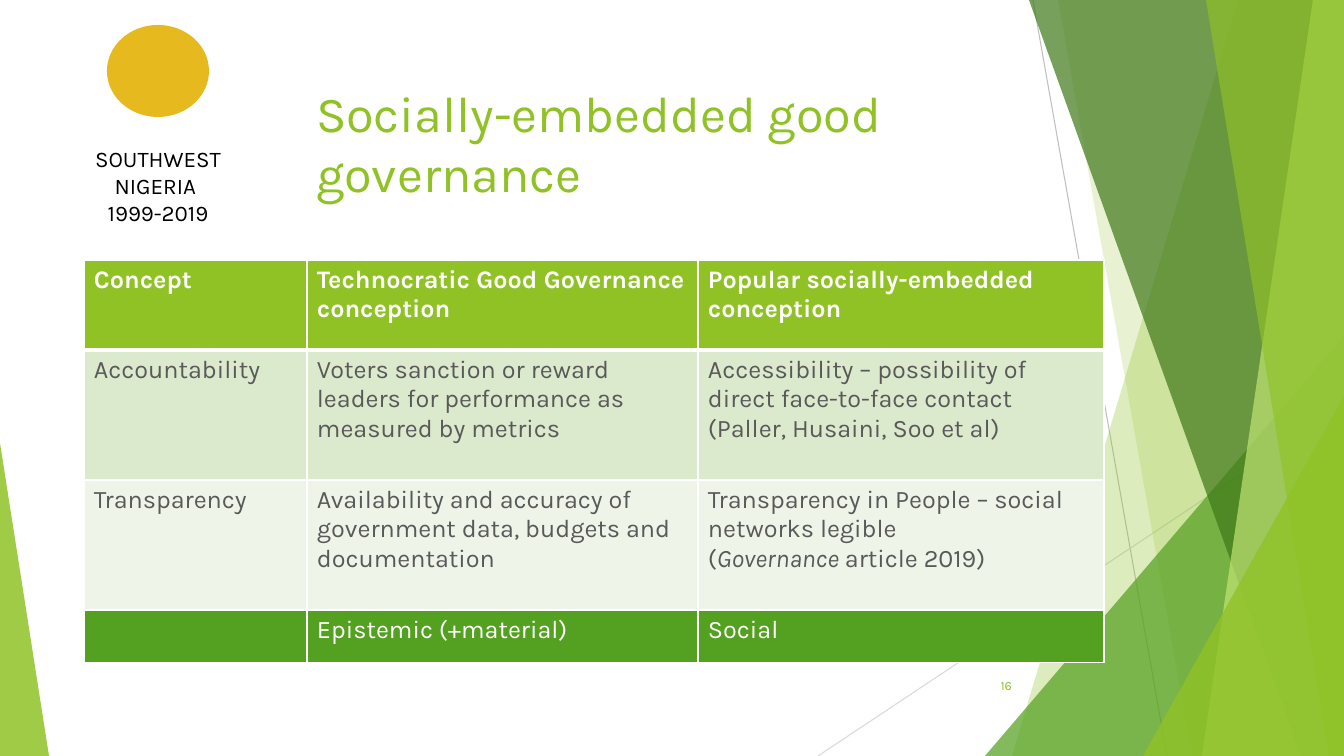
from lxml import etree
from pptx import Presentation
from pptx.dml.color import RGBColor
from pptx.enum.shapes import MSO_CONNECTOR, MSO_SHAPE
from pptx.enum.text import MSO_ANCHOR, PP_ALIGN
from pptx.oxml.ns import qn
from pptx.util import Emu, Pt

STRAIGHT = MSO_CONNECTOR.STRAIGHT
TRIANGLE, OVAL = MSO_SHAPE.ISOSCELES_TRIANGLE, MSO_SHAPE.OVAL
TOP, MIDDLE = MSO_ANCHOR.TOP, MSO_ANCHOR.MIDDLE
LEFT, CENTER, RIGHT = PP_ALIGN.LEFT, PP_ALIGN.CENTER, PP_ALIGN.RIGHT

EMU_PER_PX = 914400 / 100.8
WIDTH, HEIGHT = 1344, 756
INSET_X, INSET_Y = 10, 5
FONT = "Karla"
COLORS = {
    "white": "FFFFFF", "black": "000000", "body": "595959",
    "lime": "90C226", "green": "54A021", "forest": "3F7819", "pale": "C0E474",
    "band_dark": "DBE9CD", "band_light": "EEF4E8", "sun": "E6B91E",
    "line_dark": "BFBFBF", "line_light": "D9D9D9",
}

ROWS = [
    ("Concept", "Technocratic Good Governance conception",
     "Popular socially-embedded conception"),
    ("Accountability",
     "Voters sanction or reward leaders for performance as measured by metrics",
     "Accessibility – possibility of direct face-to-face contact "
     "(Paller, Husaini, Soo et al)"),
    ("Transparency",
     "Availability and accuracy of government data, budgets and documentation",
     "Transparency in People – social networks legible\n"
     "(*Governance* article 2019)"),
    ("", "Epistemic (+material)", "Social"),
]
ROW_STYLES = [("lime", "white", True), ("band_dark", "body", False),
              ("band_light", "body", False), ("green", "white", False)]


def px(length):
    """Turn px into EMU."""
    return Emu(round(length * EMU_PER_PX))


def rgb(name):
    """Look up a palette colour."""
    return RGBColor.from_string(COLORS[name])


def write(frame, text, size, color, bold=False, align=LEFT):
    """Fill a text frame: newline parts paragraphs, \\v breaks lines, *...* is italic."""
    frame.word_wrap = True
    for index, content in enumerate(text.split("\n")):
        paragraph = frame.add_paragraph() if index else frame.paragraphs[0]
        paragraph.alignment = align
        paragraph.font.size = Pt(size)
        for line_index, line in enumerate(content.split("\v")):
            if line_index:
                paragraph.add_line_break()
            for part, words in enumerate(line.split("*")):
                run = paragraph.add_run()
                run.text = words
                run.font.name, run.font.size = FONT, Pt(size)
                run.font.bold, run.font.italic = bold, part % 2 == 1
                run.font.color.rgb = rgb(color)


def add_label(slide, box, text, size, color, align=LEFT, anchor=TOP, inset=True):
    """Place a text box."""
    frame = slide.shapes.add_textbox(*map(px, box)).text_frame
    frame.margin_left = frame.margin_right = px(INSET_X * inset)
    frame.margin_top = frame.margin_bottom = px(INSET_Y * inset)
    frame.vertical_anchor = anchor
    write(frame, text, size, color, align=align)


def paint(shape, color, opacity=100):
    """Give a shape a flat, possibly see-through fill without outline or shadow."""
    shape.shadow.inherit = False
    shape.line.fill.background()
    shape.fill.solid()
    shape.fill.fore_color.rgb = rgb(color)
    if opacity < 100:
        tint = shape._element.spPr.find(qn("a:solidFill"))[0]
        etree.SubElement(tint, qn("a:alpha"), val=str(opacity * 1000))


def add_ray(slide, start, end, color):
    """Draw a thin straight line."""
    ray = slide.shapes.add_connector(STRAIGHT, *map(px, start + end))
    ray.line.color.rgb = rgb(color)
    ray.line.width = Pt(0.75)
    etree.SubElement(ray._element.spPr, qn("a:effectLst"))


def add_pane(slide, box, top_x, bottom_x, color, opacity):
    """Draw a pane with a slanted left edge that fills the box to its right."""
    left, top, width, height = box
    right, bottom = left + width, top + height
    outline = slide.shapes.build_freeform(left + top_x, top, scale=EMU_PER_PX)
    outline.add_line_segments(
        [(right, top), (right, bottom), (left + bottom_x, bottom)], close=True)
    paint(outline.convert_to_shape(), color, opacity)


def add_wedge(slide, box, apex, color, opacity):
    """Draw a triangle standing in a corner of the slide."""
    wedge = slide.shapes.add_shape(TRIANGLE, *map(px, box))
    wedge.adjustments[0] = apex
    paint(wedge, color, opacity)


def add_backdrop(slide, box):
    """Layer the green facets along the sides of the slide."""
    left, top, width, height = box
    right, bottom = left + width, top + height

    def pane(top_x, bottom_x, color, opacity):
        add_pane(slide, box, top_x, bottom_x, color, opacity)

    def corner(wide, high, color, opacity):
        add_wedge(slide, (right - wide, bottom - high, wide, high), 1, color, opacity)

    add_ray(slide, (left + 1033, top), (left + 1167, bottom), "line_dark")
    add_ray(slide, (right, top + 406), (left + 818, bottom), "line_light")
    pane(1238, 1012, "lime", 30)
    pane(1058, 1192, "lime", 20)
    corner(359, 420, "green", 72)
    pane(1029, 1301, "forest", 70)
    pane(1313, 1202, "pale", 70)
    pane(1206, 1329, "lime", 65)
    corner(201, 360, "lime", 80)
    add_wedge(slide, (left, bottom - 313, 49, 313), 0, "lime", 85)


def add_emblem(slide, box):
    """Set the sun disc above its caption."""
    left, top, width, height = box
    disc = slide.shapes.add_shape(OVAL, *map(px, (left + 32, top, 102, 92)))
    paint(disc, "sun")
    add_label(slide, (left, top + 120, width, height - 120),
              "SOUTHWEST NIGERIA \v1999-2019", 16, "black", CENTER, inset=False)


def set_border(cell, side, width):
    """Draw one white cell edge."""
    edge = etree.SubElement(cell._tc.get_or_add_tcPr(), qn(f"a:{side}"),
                            w=str(Pt(width)))
    fill = etree.SubElement(edge, qn("a:solidFill"))
    etree.SubElement(fill, qn("a:srgbClr"), val=COLORS["white"])


def add_concepts(slide, box, column_widths, row_heights):
    """Build the table that compares the two conceptions."""
    table = slide.shapes.add_table(
        len(row_heights), len(column_widths), *map(px, box)).table
    for column, width in zip(table.columns, column_widths):
        column.width = px(width)
    for r, (texts, (fill, color, bold)) in enumerate(zip(ROWS, ROW_STYLES)):
        table.rows[r].height = px(row_heights[r])
        for c, text in enumerate(texts):
            cell = table.cell(r, c)
            for side in ("lnL", "lnR", "lnT", "lnB"):
                header_edge = (r, side) in ((0, "lnB"), (1, "lnT"))
                set_border(cell, side, 3 if header_edge else 1)
            cell.fill.solid()
            cell.fill.fore_color.rgb = rgb(fill)
            cell.margin_left = cell.margin_right = px(INSET_X)
            cell.margin_top = cell.margin_bottom = px(INSET_Y)
            write(cell.text_frame, text, 18, color, bold)


def main():
    """Assemble and save the slide."""
    deck = Presentation()
    deck.slide_width, deck.slide_height = px(WIDTH), px(HEIGHT)
    slide = deck.slides.add_slide(deck.slide_layouts[6])
    add_backdrop(slide, (0, 0, WIDTH, HEIGHT))
    add_label(slide, (306, 70, 717, 145), "Socially-embedded good governance",
              36, "lime", anchor=MIDDLE)
    add_label(slide, (947, 666, 75, 40), "16", 9, "lime", RIGHT, MIDDLE)
    add_emblem(slide, (75, 25, 166, 173))
    add_concepts(slide, (84, 260, 1020, 403), (223, 391, 406), (90, 130, 130, 53))
    deck.save("out.pptx")


if __name__ == "__main__":
    main()
